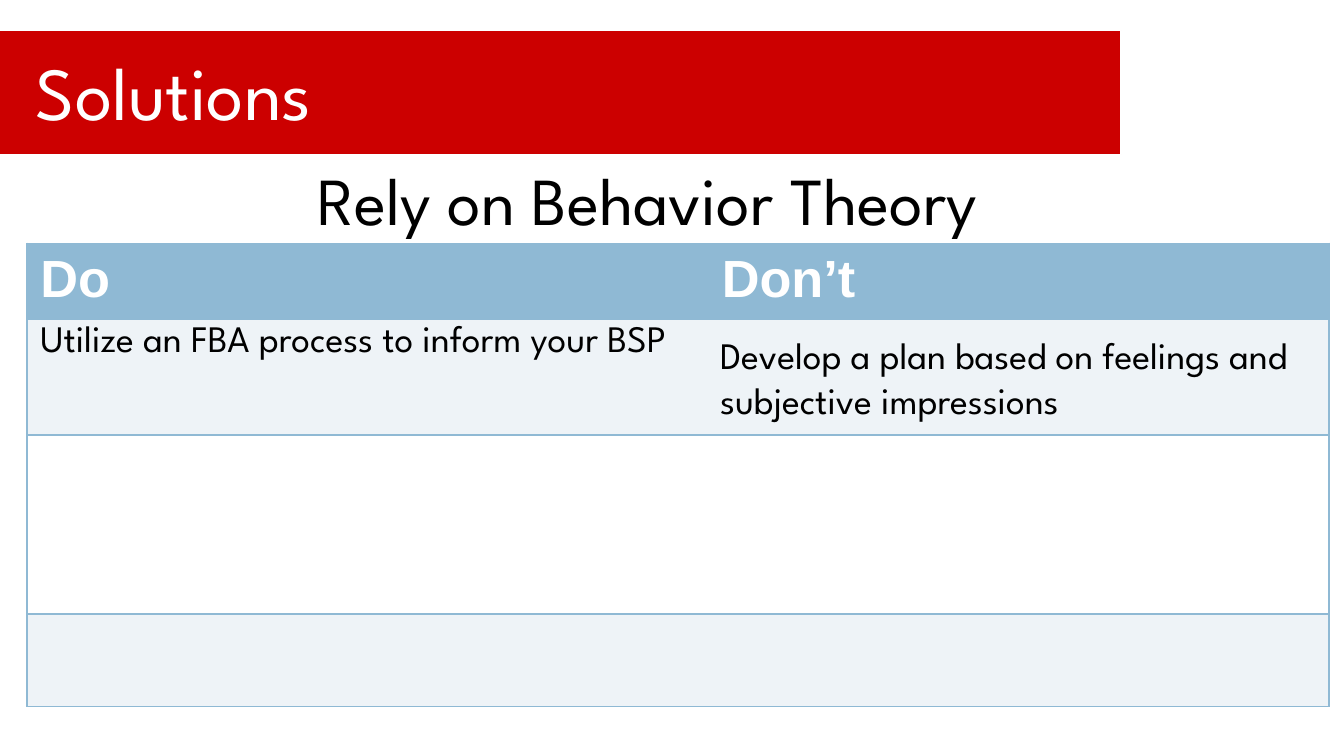
from pptx import Presentation
from pptx.dml.color import RGBColor
from pptx.enum.shapes import MSO_SHAPE
from pptx.enum.text import MSO_ANCHOR, PP_ALIGN
from pptx.oxml.ns import qn
from pptx.util import Cm, Pt
from lxml.etree import SubElement

RED = RGBColor(0xCC, 0x00, 0x00)
WHITE = RGBColor(0xFF, 0xFF, 0xFF)
BLACK = RGBColor(0x00, 0x00, 0x00)
BLUE = RGBColor(0x8F, 0xB9, 0xD4)
PALE = RGBColor(0xEE, 0xF3, 0xF7)

SPARTAN = "League Spartan"
TITLE = {"name": SPARTAN, "size": Pt(40), "color": WHITE}
HEADING = {"name": SPARTAN, "size": Pt(36), "color": BLACK}
BODY = {"name": SPARTAN, "size": Pt(20), "bold": False, "color": BLACK}
HEADER = {"name": "Arial", "size": Pt(28), "bold": True, "color": WHITE}

COLUMNS = [12.88, 11.73]
ROWS = [1.4, 2.18, 3.38, 1.75]
ROW_FILLS = [BLUE, PALE, WHITE, PALE]
CELLS = [
    ["Do", "Don’t"],
    ["Utilize an FBA process to inform your BSP", ""],
    ["", ""],
    ["", ""],
]


class SlideBuilder:
    def __init__(self, slide):
        self.slide = slide

    def add_run(self, tf, text, style, align=PP_ALIGN.LEFT):
        p = tf.paragraphs[0]
        p.alignment = align
        r = p.add_run()
        r.text = text
        for key, value in style.items():
            if key == "color":
                r.font.color.rgb = value
            else:
                setattr(r.font, key, value)

    def rectangle(self, box, fill, line):
        sp = self.slide.shapes.add_shape(MSO_SHAPE.RECTANGLE, *map(Cm, box))
        sp.shadow.inherit = False
        sp.fill.solid()
        sp.fill.fore_color.rgb = fill
        sp.line.color.rgb = line
        sp.line.width = Pt(0.75)

    def text(self, box, text, style, inset=0.25, align=PP_ALIGN.LEFT,
             anchor=MSO_ANCHOR.TOP):
        tf = self.slide.shapes.add_textbox(*map(Cm, box)).text_frame
        layout = {"word_wrap": True, "vertical_anchor": anchor,
                  "margin_left": Cm(0.25), "margin_right": Cm(0.25),
                  "margin_top": Cm(inset), "margin_bottom": Cm(inset)}
        for key, value in layout.items():
            setattr(tf, key, value)
        self.add_run(tf, text, style, align)

    def border(self, cell, side, color):
        """Draw one cell edge; a color of None hides it."""
        ln = SubElement(cell._tc.get_or_add_tcPr(), qn(f"a:ln{side}"), w=str(Pt(1)))
        if color is None:
            SubElement(ln, qn("a:noFill"))
        else:
            fill = SubElement(ln, qn("a:solidFill"))
            SubElement(fill, qn("a:srgbClr"), val=str(color))

    def table(self, left, top):
        table = self.slide.shapes.add_table(
            len(ROWS), len(COLUMNS), Cm(left), Cm(top),
            Cm(sum(COLUMNS)), Cm(sum(ROWS))).table
        for column, width in zip(table.columns, COLUMNS):
            column.width = Cm(width)
        for i, (row, height) in enumerate(zip(table.rows, ROWS)):
            row.height = Cm(height)
            for j, cell in enumerate(row.cells):
                edges = {"L": BLUE if j == 0 else None,
                         "R": BLUE if j == len(COLUMNS) - 1 else None,
                         "T": BLUE, "B": BLUE}
                for side, color in edges.items():
                    self.border(cell, side, color)
                cell.fill.solid()
                cell.fill.fore_color.rgb = ROW_FILLS[i]
                if CELLS[i][j]:
                    self.add_run(cell.text_frame, CELLS[i][j], BODY if i else HEADER)


def main():
    prs = Presentation()
    prs.slide_width, prs.slide_height = Cm(25.4), Cm(14.29)
    s = SlideBuilder(prs.slides.add_slide(prs.slide_layouts[6]))
    s.rectangle((-0.2, 0.58, 21.39, 2.34), RED, WHITE)
    s.text((0.43, 0.69, 24.05, 2.06), "Solutions", TITLE, anchor=MSO_ANCHOR.MIDDLE)
    s.text((0.4, 2.74, 23.67, 1.85), "Rely on Behavior Theory", HEADING,
           align=PP_ALIGN.CENTER)
    s.table(0.51, 4.6)
    s.text((13.36, 6.15, 11.28, 1.96),
           "Develop a plan based on feelings and subjective impressions",
           BODY, inset=0.13)
    prs.save("out.pptx")


if __name__ == "__main__":
    main()
